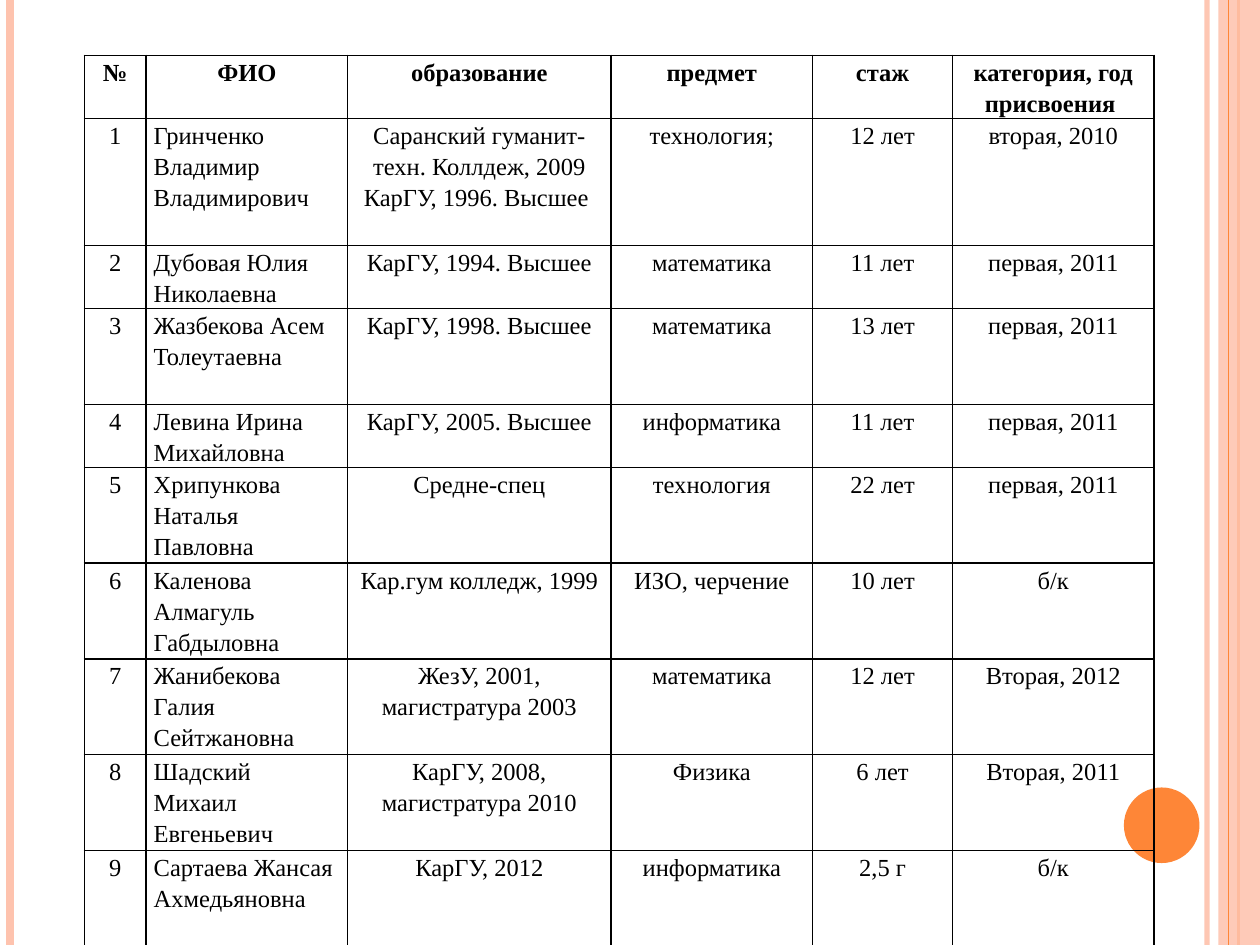
from dataclasses import dataclass

from lxml import etree
from pptx import Presentation
from pptx.dml.color import RGBColor
from pptx.enum import shapes, text
from pptx.oxml import ns
from pptx.util import Inches, Pt


@dataclass(frozen=True)
class Theme:
    ink: str = "000000"
    rose: str = "FEC3AE"
    orange: str = "FE8637"
    font: str = "Times New Roman"
    size: int = 14
    spacing: float = 1.15
    border: int = 1


theme = Theme()


def write(cell, content, bold=False, align=text.PP_ALIGN.CENTER):
    """Fill a cell with one paragraph per line of content."""
    cell.text = content
    for paragraph in cell.text_frame.paragraphs:
        paragraph.alignment = align
        paragraph.line_spacing = theme.spacing
        for run in paragraph.runs:
            run.font.name = theme.font
            run.font.size = Pt(theme.size)
            run.font.bold = bold
            run.font.color.rgb = RGBColor.from_string(theme.ink)


def set_alpha(fill, percent):
    """Make a solid colour partly transparent."""
    color = next(fill.iter(ns.qn("a:srgbClr")))
    etree.SubElement(color, ns.qn("a:alpha"), val=str(percent * 1000))


prs = Presentation()
prs.slide_width, prs.slide_height = Inches(10), Inches(7.5)
slide = prs.slides.add_slide(prs.slide_layouts[6])

# Vertical stripes at the edges: x, colour, width, opacity; the band lies under the last one
stripes = [
    (9.58, theme.rose, 3, 93),
    (0.08, theme.rose, 4.5, 100),
    (9.83, theme.orange, 1.5, 100),
    (9.75, theme.orange, 0.75, 100),
]
for x, color, width, opacity in stripes:
    if x == 9.75:
        band = slide.shapes.add_shape(
            shapes.MSO_SHAPE.RECTANGLE, Inches(9.67), 0, Inches(0.33), prs.slide_height)
        band.shadow.inherit = False
        band.fill.solid()
        band.fill.fore_color.rgb = RGBColor.from_string(theme.rose)
        band.line.fill.background()
        set_alpha(band.fill._xPr, 87)
    stripe = slide.shapes.add_connector(
        shapes.MSO_CONNECTOR.STRAIGHT, Inches(x), 0, Inches(x), prs.slide_height)
    stripe.line.color.rgb = RGBColor.from_string(color)
    stripe.line.width = Pt(width)
    if opacity < 100:
        set_alpha(stripe.line._ln, opacity)
    etree.SubElement(stripe._element.spPr, ns.qn("a:effectLst"))

# Orange disc
disc = slide.shapes.add_shape(
    shapes.MSO_SHAPE.OVAL, Inches(8.92), Inches(6.25), Inches(0.6), Inches(0.6))
disc.shadow.inherit = False
disc.fill.solid()
disc.fill.fore_color.rgb = RGBColor.from_string(theme.orange)
disc.line.fill.background()

# Teachers: name, education, subject, experience, category
header = ("№", "ФИО", "образование", "предмет", "стаж", "категория, год присвоения ")
teachers = [
    ("Гринченко Владимир Владимирович",
     "Саранский гуманит-техн. Коллдеж, 2009\nКарГУ, 1996. Высшее ",
     "технология;", "12 лет", "вторая, 2010"),
    ("Дубовая Юлия Николаевна", "КарГУ, 1994. Высшее", "математика", "11 лет", "первая, 2011"),
    ("Жазбекова Асем Толеутаевна", "КарГУ, 1998. Высшее", "математика", "13 лет", "первая, 2011"),
    ("Левина Ирина Михайловна", "КарГУ, 2005. Высшее", "информатика", "11 лет", "первая, 2011"),
    ("Хрипункова Наталья Павловна", "Средне-спец", "технология", "22 лет", "первая, 2011"),
    ("Каленова Алмагуль Габдыловна", "Кар.гум колледж, 1999", "ИЗО, черчение", "10 лет", "б/к"),
    ("Жанибекова Галия Сейтжановна", "ЖезУ, 2001,\nмагистратура 2003",
     "математика", "12 лет", "Вторая, 2012"),
    ("Шадский Михаил Евгеньевич", "КарГУ, 2008,\nмагистратура 2010",
     "Физика", "6 лет", "Вторая, 2011"),
    ("Сартаева Жансая Ахмедьяновна", "КарГУ, 2012", "информатика", "2,5 г", "б/к"),
]
rows = [header] + [(str(n), *teacher) for n, teacher in enumerate(teachers, 1)]
column_widths = [0.49, 1.6, 2.09, 1.6, 1.11, 1.6]
row_heights = [0.5, 1.01, 0.5, 0.76, 0.5] + [0.76] * 5

# Table of teachers
staff = slide.shapes.add_table(
    len(rows), len(header), Inches(0.67), Inches(0.44),
    Inches(sum(column_widths)), Inches(sum(row_heights))).table
staff.first_row = staff.horz_banding = False
for column, width in zip(staff.columns, column_widths):
    column.width = Inches(width)

for r, (values, height) in enumerate(zip(rows, row_heights)):
    staff.rows[r].height = Inches(height)
    for c, value in enumerate(values):
        cell = staff.cell(r, c)
        cell.margin_left = cell.margin_right = Inches(0.06)
        cell.margin_top = cell.margin_bottom = 0
        is_name = r > 0 and c == 1
        write(cell, value, bold=r == 0,
              align=text.PP_ALIGN.LEFT if is_name else text.PP_ALIGN.CENTER)
        # Borders come before the fill in the cell properties
        properties = cell._tc.get_or_add_tcPr()
        for side in ("lnL", "lnR", "lnT", "lnB"):
            border = etree.SubElement(
                properties, ns.qn(f"a:{side}"), w=str(Pt(theme.border)))
            ink = etree.SubElement(border, ns.qn("a:solidFill"))
            etree.SubElement(ink, ns.qn("a:srgbClr"), val=theme.ink)
        cell.fill.background()

prs.save("out.pptx")
